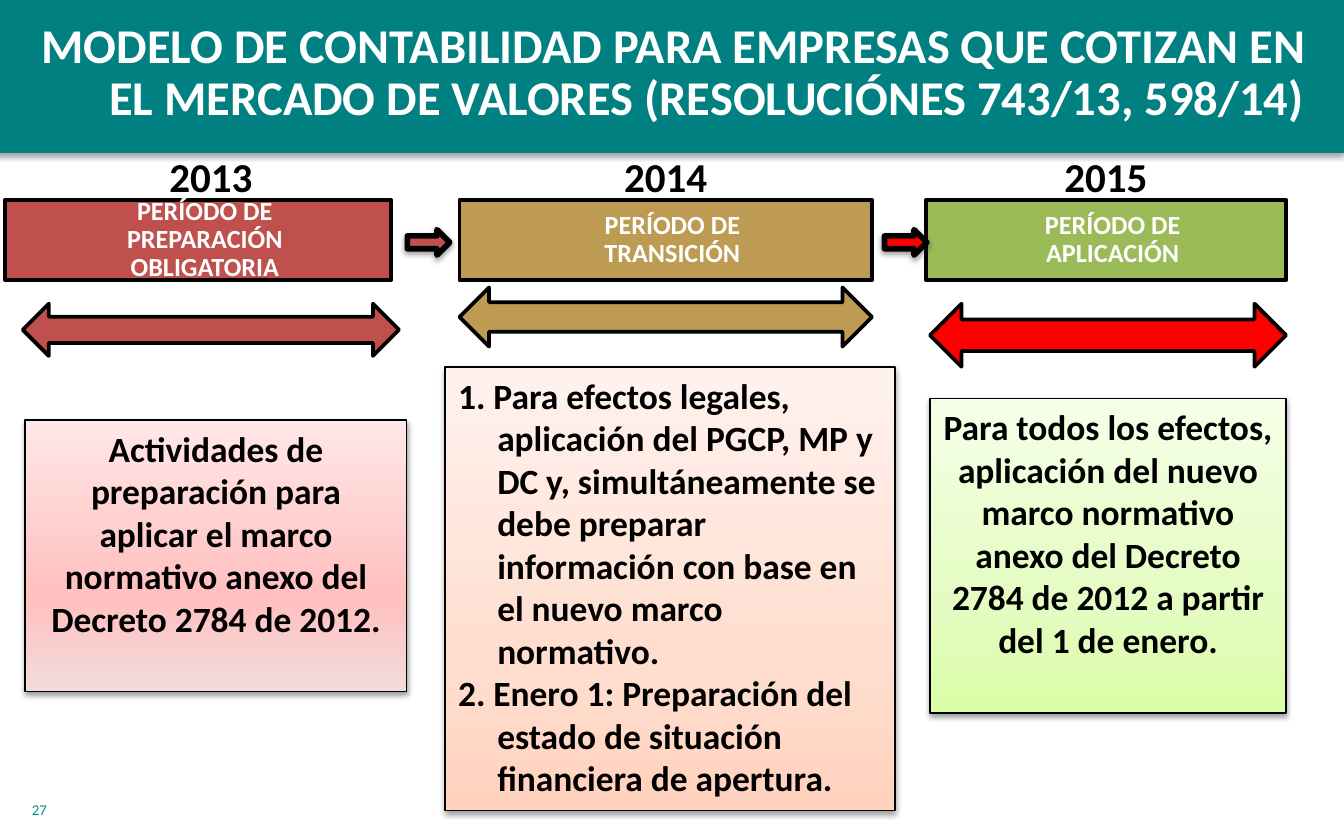
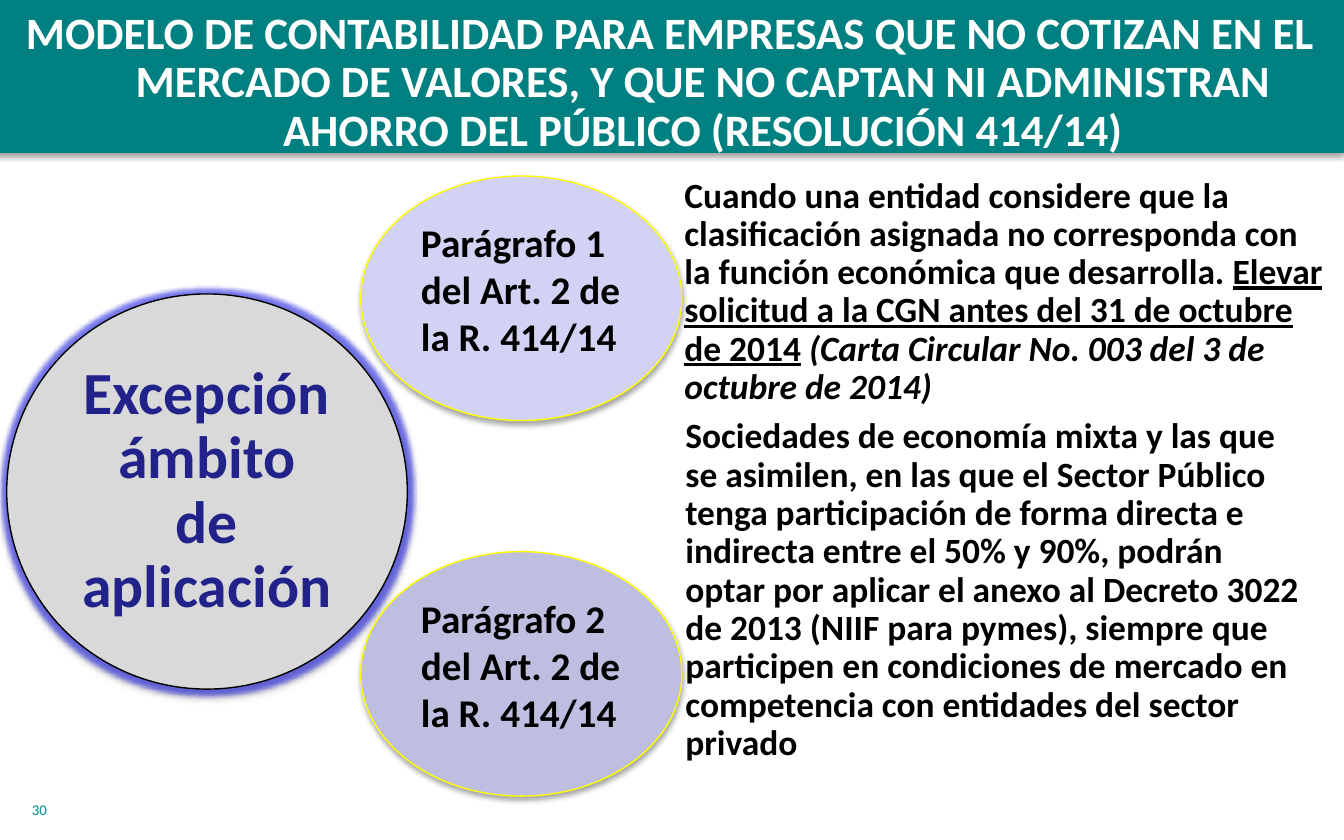
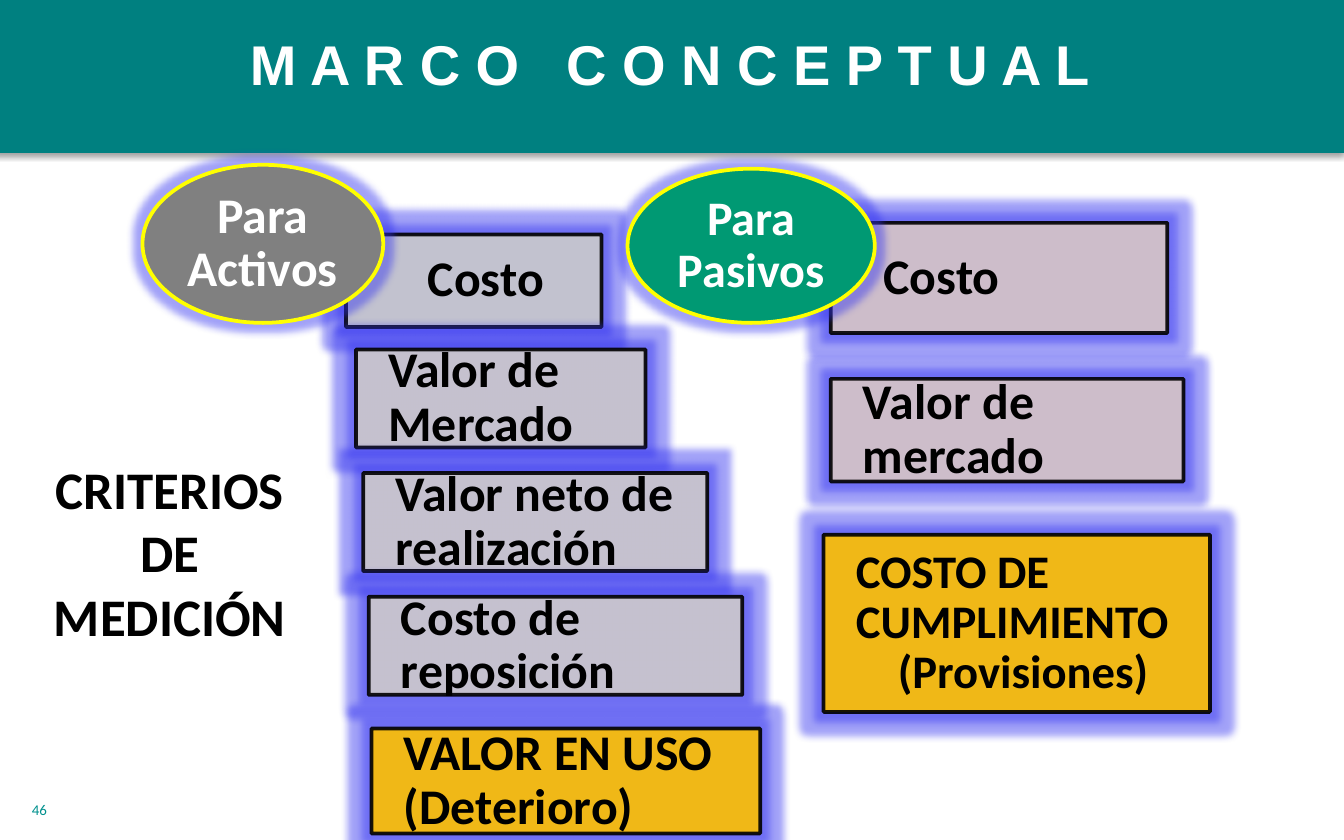
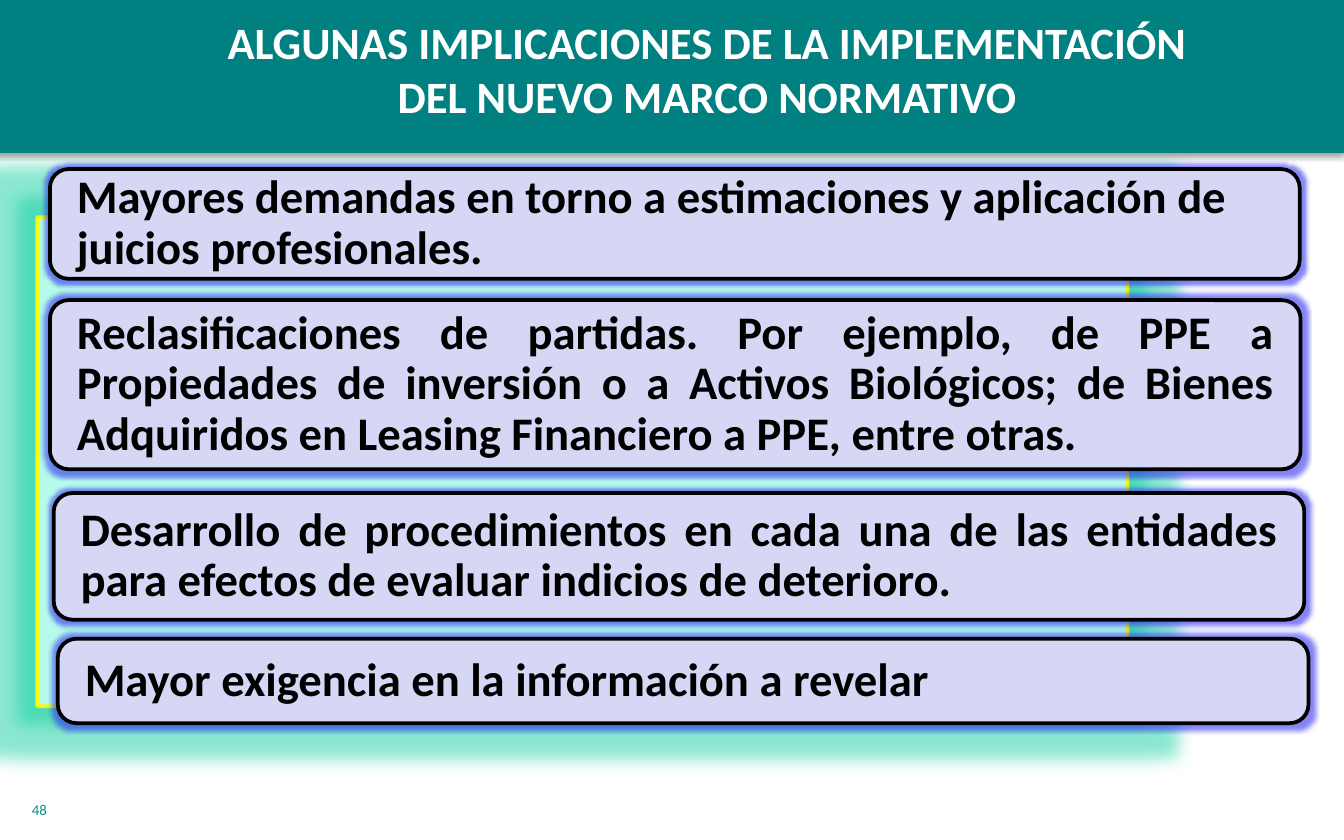
from dataclasses import dataclass
from typing import NamedTuple, Optional, Sequence, Union

from lxml.etree import SubElement
from pptx import Presentation
from pptx.dml.color import RGBColor
from pptx.enum.shapes import MSO_SHAPE as Shape
from pptx.enum.text import MSO_ANCHOR as Anchor, MSO_AUTO_SIZE as AutoSize, PP_ALIGN as Align
from pptx.oxml.ns import qn
from pptx.util import Pt


@dataclass(frozen=True)
class Theme:
    band: str = "008080"
    number: str = "00918E"
    black: str = "000000"
    white: str = "FFFFFF"
    navy: str = "22228B"
    yellow: str = "FFFF00"
    red: str = "FF0000"
    brick: str = "C0504D"
    sand: str = "BD9B53"
    olive: str = "9BBB59"
    silver: str = "D9D9D9"
    gray: str = "808080"
    green: str = "009973"
    asset: str = "CFCBCB"
    liability: str = "D8C6C6"
    amber: str = "FFC000"
    lilac: str = "D6D6F5"
    mint: str = "C2FFF0"
    glow_blue: str = "3232F0"
    glow_mint: str = "00CC99"
    font: str = "Calibri"
    tiny: float = 8
    label: float = 14
    body: float = 19
    note: float = 21
    year: float = 22
    title: float = 24
    wide_title: float = 26
    point: float = 25
    criterion: float = 26.7
    heading: float = 28.3
    display: float = 30
    hub: float = 32


THEME = Theme()


class Box(NamedTuple):
    left: float
    top: float
    width: float
    height: float


class Glow(NamedTuple):
    color: str
    radius: float
    opacity: int = 45


class Shadow(NamedTuple):
    opacity: int = 38
    blur: float = 3.1
    distance: float = 1.6


class Insets(NamedTuple):
    left: float = 7.2
    top: float = 3.6
    right: float = 7.2
    bottom: float = 3.6


@dataclass(frozen=True)
class Look:
    fill: Union[str, Sequence[tuple[int, str]]]
    line: Optional[str] = None
    width: float = 0.75
    opacity: int = 100
    glow: Optional[Glow] = None
    shadow: Optional[Shadow] = None


@dataclass(frozen=True)
class TextStyle:
    size: float
    color: str = THEME.black
    bold: bool = True
    align: Align = Align.LEFT
    spacing: float = 1.0
    anchor: Anchor = Anchor.TOP
    insets: Insets = Insets()
    font: str = THEME.font
    wrap: bool = True


class Span(NamedTuple):
    text: str
    underline: bool = False
    italic: bool = False
    tracking: float = 0


class Para(NamedTuple):
    spans: Sequence[Span]
    margin: float = 0
    first: float = 0


def line_of(text: str, margin: float = 0, first: float = 0) -> Para:
    return Para([Span(text)], margin, first)


def hanging(text: str, depth: float) -> Para:
    return line_of(text, depth, -depth)


def rgb(color: str) -> RGBColor:
    return RGBColor.from_string(color)


def add_color(parent, color: str, opacity: int = 100) -> None:
    node = SubElement(parent, qn("a:srgbClr"), val=color)
    if opacity < 100:
        SubElement(node, qn("a:alpha"), val=str(opacity * 1000))


def paint(fill, color: str, opacity: int) -> None:
    fill.solid()
    fill.fore_color.rgb = rgb(color)
    if opacity < 100:
        node = fill.fore_color._xFill.find(qn("a:srgbClr"))
        SubElement(node, qn("a:alpha"), val=str(opacity * 1000))


def paint_gradient(shape, stops: Sequence[tuple[int, str]]) -> None:
    """Fill from bottom to top with the given percent and colour stops."""
    shape.fill.gradient()
    shape.fill.gradient_angle = 90
    stop_list = shape.element.spPr.find(qn("a:gradFill")).find(qn("a:gsLst"))
    for stop in list(stop_list):
        stop_list.remove(stop)
    for percent, color in stops:
        add_color(SubElement(stop_list, qn("a:gs"), pos=str(percent * 1000)), color)


def add_effects(shape, glow: Optional[Glow], shadow: Optional[Shadow]) -> None:
    shape.shadow.inherit = False
    effects = shape.element.spPr.find(qn("a:effectLst"))
    if glow:
        node = SubElement(effects, qn("a:glow"), rad=str(Pt(glow.radius)))
        add_color(node, glow.color, glow.opacity)
    if shadow:
        node = SubElement(effects, qn("a:outerShdw"), blurRad=str(Pt(shadow.blur)),
                          dist=str(Pt(shadow.distance)), dir="5400000", rotWithShape="0")
        add_color(node, THEME.black, shadow.opacity)


def write(frame, content: Union[str, Sequence[Para]], style: TextStyle) -> None:
    frame.auto_size = AutoSize.NONE
    frame.word_wrap = style.wrap
    frame.vertical_anchor = style.anchor
    frame.margin_left, frame.margin_top, frame.margin_right, frame.margin_bottom = map(Pt, style.insets)
    for index, item in enumerate([line_of(content)] if isinstance(content, str) else content):
        para = frame.paragraphs[0] if index == 0 else frame.add_paragraph()
        para.alignment = style.align
        para.line_spacing = style.spacing
        if item.margin or item.first:
            properties = para._p.get_or_add_pPr()
            properties.set("marL", str(Pt(item.margin)))
            properties.set("indent", str(Pt(item.first)))
        for span in item.spans:
            run = para.add_run()
            run.text = span.text
            if span.underline:
                run.font.underline = True
            if span.italic:
                run.font.italic = True
            if span.tracking:
                run.font._element.set("spc", str(round(span.tracking * 100)))
        apply_font(para, style)


def apply_font(para, style: TextStyle) -> None:
    """Set the paragraph font, and its runs for viewers that skip paragraph defaults."""
    for font in (para.font, *(run.font for run in para.runs)):
        font.name = style.font
        font.size = Pt(style.size)
        font.bold = style.bold
        font.color.rgb = rgb(style.color)


def add_figure(page, kind: Shape, box: Box, look: Look, content=None,
               style: Optional[TextStyle] = None):
    figure = page.shapes.add_shape(kind, *map(Pt, box))
    if isinstance(look.fill, str):
        paint(figure.fill, look.fill, look.opacity)
    else:
        paint_gradient(figure, look.fill)
    if look.line:
        figure.line.width = Pt(look.width)
        paint(figure.line.fill, look.line, look.opacity)
    else:
        figure.line.fill.background()
    add_effects(figure, look.glow, look.shadow)
    if content:
        write(figure.text_frame, content, style)
    return figure


def add_text(page, box: Box, content, style: TextStyle) -> None:
    write(page.shapes.add_textbox(*map(Pt, box)).text_frame, content, style)


def add_page(deck, number: int, title, box: Box, style: TextStyle):
    page = deck.slides.add_slide(deck.slide_layouts.get_by_name("Title Only"))
    heading = page.shapes.title
    heading.left, heading.top, heading.width, heading.height = map(Pt, box)
    write(heading.text_frame, title, style)
    add_text(page, Box(10, 424, 150, 21.6), str(number),
             TextStyle(THEME.tiny, THEME.number, bold=False, insets=Insets(top=5)))
    return page


def add_band_to_layout(deck, page) -> None:
    """Draw the title band on the page, then hand it to the layout all pages share."""
    band = add_figure(page, Shape.RECTANGLE, Box(-3, -1.5, 723, 83.5),
                      Look(THEME.band, shadow=Shadow()))
    page.slide_layout.shapes.element.insert(2, band.element)


def title_style(size: float, spacing: float = 0.9) -> TextStyle:
    return TextStyle(size, THEME.white, align=Align.CENTER, spacing=spacing)


class Period(NamedTuple):
    year: str
    name: str
    color: str
    arrow_color: str
    year_box: Box
    name_box: Box
    arrow_box: Box
    detail_box: Box
    gradient: Sequence[tuple[int, str]]
    detail: Sequence[Para]
    align: Align


PERIODS = [
    Period("2013", "PERÍODO DE PREPARACIÓN OBLIGATORIA", THEME.brick, THEME.brick,
           Box(12.2, 77.8, 201.6, 33.8), Box(2.9, 107, 206.6, 43.2),
           Box(12.2, 162.7, 201.6, 28), Box(13.5, 225, 204.5, 145.4),
           [(0, "F2DCDB"), (35, "FFC0BF"), (100, "FFE7E7")],
           [line_of("Actividades de preparación para aplicar el marco normativo anexo del "
                    "Decreto 2784 de 2012.")], Align.CENTER),
    Period("2014", "PERÍODO DE TRANSICIÓN", THEME.sand, THEME.sand,
           Box(246.2, 77.8, 221, 33.8), Box(246.2, 107, 221, 43.2),
           Box(246.2, 154, 221, 31.7), Box(238.3, 196.6, 241.2, 237.6),
           [(0, "FFD2BD"), (35, "FFDED0"), (100, "FFF2ED")],
           [hanging("1. Para efectos legales, aplicación del PGCP, MP y DC y, simultáneamente "
                    "se debe preparar información con base en el nuevo marco normativo.", 21),
            hanging("2. Enero 1: Preparación del estado de situación financiera de apertura.", 21)],
           Align.LEFT),
    Period("2015", "PERÍODO DE APLICACIÓN", THEME.olive, THEME.red,
           Box(496, 77.8, 193, 33.8), Box(496, 107, 193, 43.2),
           Box(498.2, 162.7, 190.8, 33.8), Box(498.2, 213.5, 190.8, 168.5),
           [(0, "DAFDA7"), (35, "E4FCC2"), (100, "F5FFE7")],
           [line_of("Para todos los efectos, aplicación del nuevo marco normativo anexo del "
                    "Decreto 2784 de 2012 a partir del 1 de enero.")], Align.CENTER),
]


def build_periods(deck) -> None:
    title = hanging("MODELO DE CONTABILIDAD PARA EMPRESAS QUE COTIZAN EN EL MERCADO DE VALORES "
                    "(RESOLUCIÓNES 743/13, 598/14)", 35.3)
    page = add_page(deck, 27, [title], Box(8.6, 7.9, 705.6, 64), title_style(THEME.wide_title))
    add_band_to_layout(deck, page)
    name_style = TextStyle(THEME.label, THEME.white, align=Align.CENTER, spacing=0.9,
                           anchor=Anchor.MIDDLE, insets=Insets(44.6, 3.6, 37.4, 3.6))
    for period in PERIODS:
        add_figure(page, Shape.RECTANGLE, period.name_box,
                   Look(period.color, THEME.black, 2), period.name, name_style)
        add_text(page, period.year_box, period.year, TextStyle(THEME.year, align=Align.CENTER))
        add_figure(page, Shape.RECTANGLE, period.detail_box,
                   Look(period.gradient, THEME.black, shadow=Shadow()),
                   period.detail, TextStyle(THEME.body, align=period.align))
        add_figure(page, Shape.LEFT_RIGHT_ARROW, period.arrow_box,
                   Look(period.arrow_color, THEME.black, 2))
    for left, color in ((218.2, THEME.brick), (473.8, THEME.red)):
        add_figure(page, Shape.RIGHT_ARROW, Box(left, 123, 22.7, 13.7),
                   Look(color, THEME.black, 3, shadow=Shadow()))


def build_exceptions(deck) -> None:
    title = hanging("MODELO DE CONTABILIDAD PARA EMPRESAS QUE NO COTIZAN EN EL MERCADO DE VALORES, "
                    "Y QUE NO CAPTAN NI ADMINISTRAN AHORRO DEL PÚBLICO (RESOLUCIÓN 414/14)", 35.3)
    page = add_page(deck, 30, [title], Box(-2.2, 2.2, 722.2, 85.7), title_style(THEME.title))
    soft = Shadow(35, 3.1, 1.8)
    add_figure(page, Shape.OVAL, Box(3.6, 157.5, 214.6, 211.7),
               Look(THEME.silver, THEME.black, glow=Glow(THEME.glow_blue, 5, 60), shadow=soft),
               "Excepción ámbito de aplicación",
               TextStyle(THEME.hub, THEME.navy, align=Align.CENTER, spacing=0.9,
                         anchor=Anchor.MIDDLE, insets=Insets(9, 9, 9, 9)))
    body = TextStyle(THEME.body, spacing=0.9, anchor=Anchor.MIDDLE,
                     insets=Insets(0.7, 0.7, 0.7, 0.7))
    add_text(page, Box(366, 94.3, 345.6, 124.6), [Para([
        Span("Cuando una entidad considere que la clasificación asignada no corresponda con la "
             "función económica que desarrolla. "),
        Span("Elevar solicitud a la CGN antes del 31 de octubre de 2014", underline=True),
        Span(" "),
        Span("(Carta Circular No. 003 del 3 de octubre de 2014)", italic=True)])], body)
    add_text(page, Box(366.5, 208.8, 334.8, 215.3),
             "Sociedades de economía mixta y las que se asimilen, en las que el Sector Público "
             "tenga participación de forma directa e indirecta entre el 50% y 90%, podrán optar "
             "por aplicar el anexo al Decreto 3022 de 2013 (NIIF para pymes), siempre que "
             "participen en condiciones de mercado en competencia con entidades del sector "
             "privado", body)
    for number, top, color in ((1, 94.3, "D2D2F4"), (2, 295.5, "BEBEE0")):
        add_figure(page, Shape.OVAL, Box(193.3, top, 172, 131),
                   Look(color, THEME.yellow, shadow=soft),
                   f"Parágrafo {number} del Art. 2 de la R. 414/14", TextStyle(THEME.note))


class Criterion(NamedTuple):
    box: Box
    color: str
    content: Sequence[Para]
    size: float = THEME.criterion


CRITERIA = [
    Criterion(Box(185.3, 125.7, 137, 49.5), "CCCCCC", [line_of("Costo", 26.5)]),
    Criterion(Box(190.8, 187.2, 155, 52.6), THEME.asset, [line_of("Valor de Mercado")]),
    Criterion(Box(194.6, 253.4, 184.3, 52.6), THEME.asset, [line_of("Valor neto de realización")]),
    Criterion(Box(197.5, 319.7, 200.2, 52.6), THEME.asset, [line_of("Costo de reposición")]),
    Criterion(Box(199, 390.3, 208.3, 56.2), THEME.amber, [line_of("VALOR EN USO (Deterioro)")]),
    Criterion(Box(445, 119.4, 180.4, 59), THEME.liability, [line_of("Costo", 11)]),
    Criterion(Box(445, 203, 189, 55), THEME.liability, [line_of("Valor de mercado")]),
    Criterion(Box(441.2, 286.4, 207, 95), THEME.amber,
              [line_of("COSTO DE CUMPLIMIENTO"), line_of("(Provisiones)", 22.5)], THEME.point),
]


def build_criteria(deck) -> None:
    title = Para([Span("M A R C O"), Span(" ", tracking=16.68), Span("C O N C E P T U A L")])
    page = add_page(deck, 46, [title], Box(126.7, 12.2, 469.4, 43.9),
                    TextStyle(THEME.display, THEME.white, font="Arial", wrap=False))
    glow = Glow(THEME.glow_blue, 8)
    for criterion in CRITERIA:
        add_figure(page, Shape.RECTANGLE, criterion.box,
                   Look(criterion.color, THEME.black, 2, opacity=90, glow=glow),
                   criterion.content,
                   TextStyle(criterion.size, spacing=0.9, anchor=Anchor.MIDDLE,
                             insets=Insets(17.3, 0, 15, 0)))
    for name, color, box, size in (
            ("Para Activos", THEME.gray, Box(76.3, 88.3, 129, 84.7), THEME.criterion),
            ("Para Pasivos", THEME.green, Box(336.2, 90.4, 132.5, 82.6), 25.8)):
        add_figure(page, Shape.OVAL, box, Look(color, THEME.yellow, 2, glow=glow), name,
                   TextStyle(size, THEME.white, align=Align.CENTER, spacing=0.9,
                             anchor=Anchor.MIDDLE, insets=Insets(0, 0, 0, 0)))
    add_text(page, Box(14.4, 241.2, 153.4, 103),
             [line_of("CRITERIOS"), line_of("DE MEDICIÓN")],
             TextStyle(THEME.heading, align=Align.CENTER))


IMPLICATIONS = [
    (Box(26.8, 90.6, 669.5, 58.8), Align.LEFT,
     "Mayores demandas en torno a estimaciones y aplicación de juicios profesionales."),
    (Box(26.8, 160.8, 670, 90.6), Align.JUSTIFY,
     "Reclasificaciones de partidas. Por ejemplo, de PPE a Propiedades de inversión o a Activos "
     "Biológicos; de Bienes Adquiridos en Leasing Financiero a PPE, entre otras."),
    (Box(28.8, 264.2, 670, 67.8), Align.JUSTIFY,
     "Desarrollo de procedimientos en cada una de las entidades para efectos de evaluar indicios "
     "de deterioro."),
    (Box(31, 342.2, 670, 45.2), Align.LEFT, "Mayor exigencia en la información a revelar"),
]


def build_implications(deck) -> None:
    page = add_page(deck, 48,
                    "ALGUNAS IMPLICACIONES DE LA IMPLEMENTACIÓN DEL NUEVO MARCO NORMATIVO",
                    Box(108, 4.3, 541.4, 65.5), title_style(THEME.title, 1.0))
    add_figure(page, Shape.RECTANGLE, Box(20, 116.4, 584, 262),
               Look(THEME.mint, THEME.yellow, 2, opacity=90, glow=Glow(THEME.glow_mint, 18)))
    corner = 10
    for box, align, text in IMPLICATIONS:
        panel = add_figure(page, Shape.ROUNDED_RECTANGLE, box,
                           Look(THEME.lilac, THEME.black, 2, glow=Glow(THEME.glow_blue, 5, 60)),
                           text, TextStyle(THEME.point, align=align, spacing=0.9,
                                           anchor=Anchor.MIDDLE, insets=Insets(11.5, 0, 11.5, 0)))
        panel.adjustments[0] = corner / box.height


def main() -> None:
    deck = Presentation()
    deck.slide_width, deck.slide_height = Pt(720), Pt(450)
    build_periods(deck)
    build_exceptions(deck)
    build_criteria(deck)
    build_implications(deck)
    deck.save("out.pptx")


if __name__ == "__main__":
    main()
